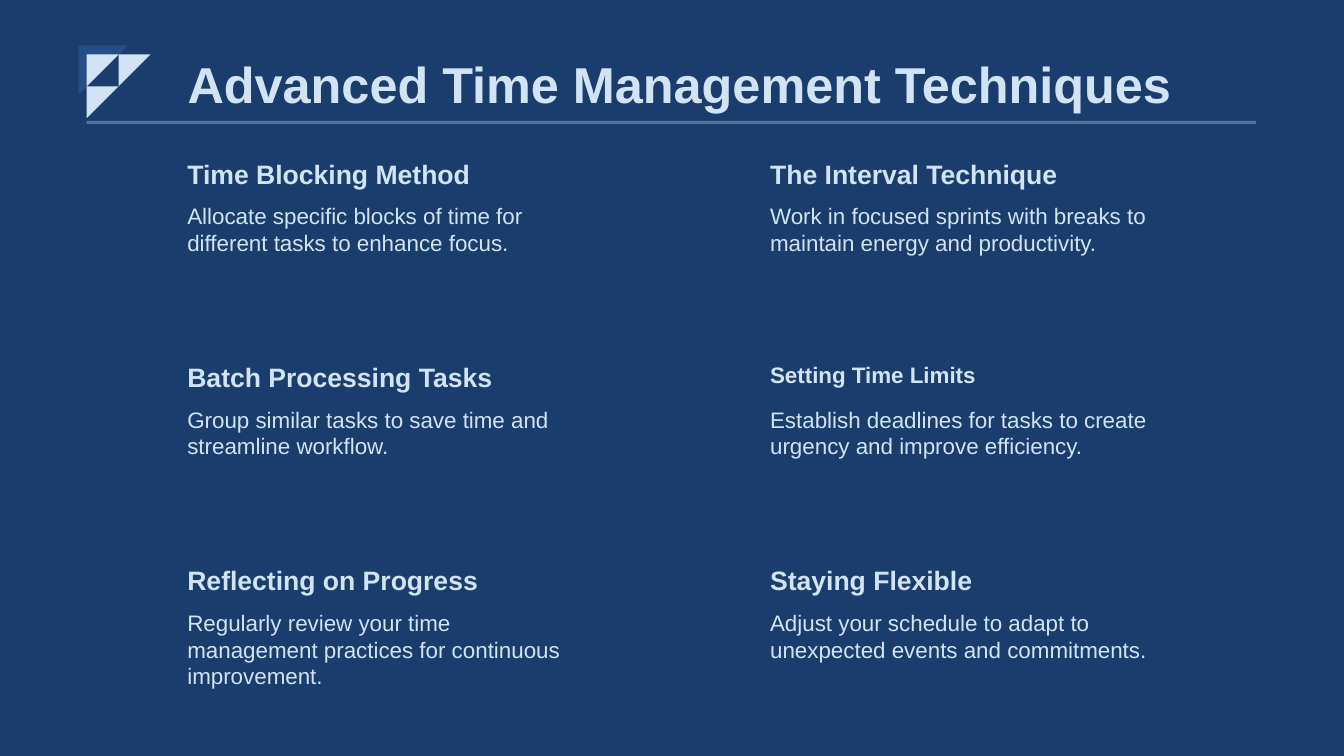
"""Build the time management techniques slide."""
import lxml.etree
import pptx
import pptx.dml.color
import pptx.enum.text
import pptx.oxml.ns
import pptx.util

Inches = pptx.util.Inches
COLORS = {"navy": "1A3D6E", "blue": "264E86", "ice": "D1E3F5"}
LEFT, TOP = 1.76, 1.52
COL_PITCH, ROW_PITCH = 5.78, 2.015
CELL_W, HEAD_H, BODY_H = 4.04, 0.44, 1.01
MARK_X, MARK_Y, TILE = 0.86, 0.54, 0.316
HEAD = {"name": "Arial", "size": pptx.util.Pt(19), "bold": True}
BODY = {"name": "Arial", "size": pptx.util.Pt(16), "bold": False}
TITLE = HEAD | {"size": pptx.util.Pt(36)}
SMALL_HEAD = HEAD | {"size": BODY["size"]}
TECHNIQUES = [
    ("Time Blocking Method", HEAD,
     "Allocate specific blocks of time for different tasks to enhance focus."),
    ("The Interval Technique", HEAD,
     "Work in focused sprints with breaks to maintain energy and productivity."),
    ("Batch Processing Tasks", HEAD,
     "Group similar tasks to save time and streamline workflow."),
    ("Setting Time Limits", SMALL_HEAD,
     "Establish deadlines for tasks to create urgency and improve efficiency."),
    ("Reflecting on Progress", HEAD,
     "Regularly review your time management practices for continuous improvement."),
    ("Staying Flexible", HEAD,
     "Adjust your schedule to adapt to unexpected events and commitments."),
]


def rgb(name):
    """Return the named colour."""
    return pptx.dml.color.RGBColor.from_string(COLORS[name])


def paint(s, color):
    """Give a shape a plain fill with no line or shadow."""
    s.shadow.inherit = False
    s.fill.solid()
    s.fill.fore_color.rgb = rgb(color)
    s.line.fill.background()


def write(tf, text, fmt):
    """Write one left-aligned paragraph in the given format."""
    tf.word_wrap = True
    p = tf.paragraphs[0]
    p.alignment = pptx.enum.text.PP_ALIGN.LEFT
    r = p.add_run()
    r.text = text
    r.font.color.rgb = rgb("ice")
    for key, value in fmt.items():
        setattr(r.font, key, value)


def add_title(slide, text):
    """Place and format the title placeholder."""
    s = slide.shapes.title
    s.left, s.top, s.width, s.height = map(Inches, (LEFT, 0.23, 10.73, 0.95))
    tf = s.text_frame
    frame = {"auto_size": pptx.enum.text.MSO_AUTO_SIZE.NONE,
             "vertical_anchor": pptx.enum.text.MSO_ANCHOR.BOTTOM,
             "margin_top": 0, "margin_bottom": Inches(0.05)}
    for key, value in frame.items():
        setattr(tf, key, value)
    write(tf, text, TITLE)


def add_rule(slide):
    """Draw the translucent rule under the title."""
    s = slide.shapes.add_shape(pptx.enum.shapes.MSO_SHAPE.RECTANGLE,
                               *map(Inches, (MARK_X, 1.2, 11.6, 0.03)))
    paint(s, "ice")
    clr = next(s._element.spPr.iter(pptx.oxml.ns.qn("a:srgbClr")))
    lxml.etree.SubElement(clr, pptx.oxml.ns.qn("a:alpha"), val="32000")


def add_triangle(shapes, x, y, side, color):
    """Draw a right triangle with its square corner at top left."""
    fb = shapes.build_freeform(Inches(x), Inches(y))
    fb.add_line_segments([(Inches(x + side), Inches(y)), (Inches(x), Inches(y + side))])
    paint(fb.convert_to_shape(), color)


def add_emblem(slide):
    """Draw the group of triangles beside the title."""
    shapes = slide.shapes.add_group_shape().shapes
    add_triangle(shapes, 0.78, 0.45, 0.49, "blue")
    for col, row in ((0, 0), (1, 0), (0, 1)):
        add_triangle(shapes, MARK_X + col * TILE, MARK_Y + row * TILE, TILE, "ice")


def add_text(slide, x, y, h, text, fmt):
    """Add a text box one grid cell wide."""
    s = slide.shapes.add_textbox(*map(Inches, (x, y, CELL_W, h)))
    write(s.text_frame, text, fmt)
    s.text_frame.auto_size = pptx.enum.text.MSO_AUTO_SIZE.SHAPE_TO_FIT_TEXT


def add_technique(slide, index, head, head_fmt, body):
    """Place a heading and its description in the two-column grid."""
    row, col = divmod(index, 2)
    x, y = LEFT + col * COL_PITCH, TOP + row * ROW_PITCH
    add_text(slide, x, y, HEAD_H, head, head_fmt)
    add_text(slide, x, y + HEAD_H, BODY_H, body, BODY)


def main():
    """Build and save the slide."""
    prs = pptx.Presentation()
    prs.slide_width, prs.slide_height = Inches(13.33), Inches(7.5)
    slide = prs.slides.add_slide(prs.slide_layouts.get_by_name("Title Only"))
    slide.background.fill.solid()
    slide.background.fill.fore_color.rgb = rgb("navy")
    add_rule(slide)
    add_emblem(slide)
    add_title(slide, "Advanced Time Management Techniques")
    for index, technique in enumerate(TECHNIQUES):
        add_technique(slide, index, *technique)
    prs.save("out.pptx")


if __name__ == "__main__":
    main()
